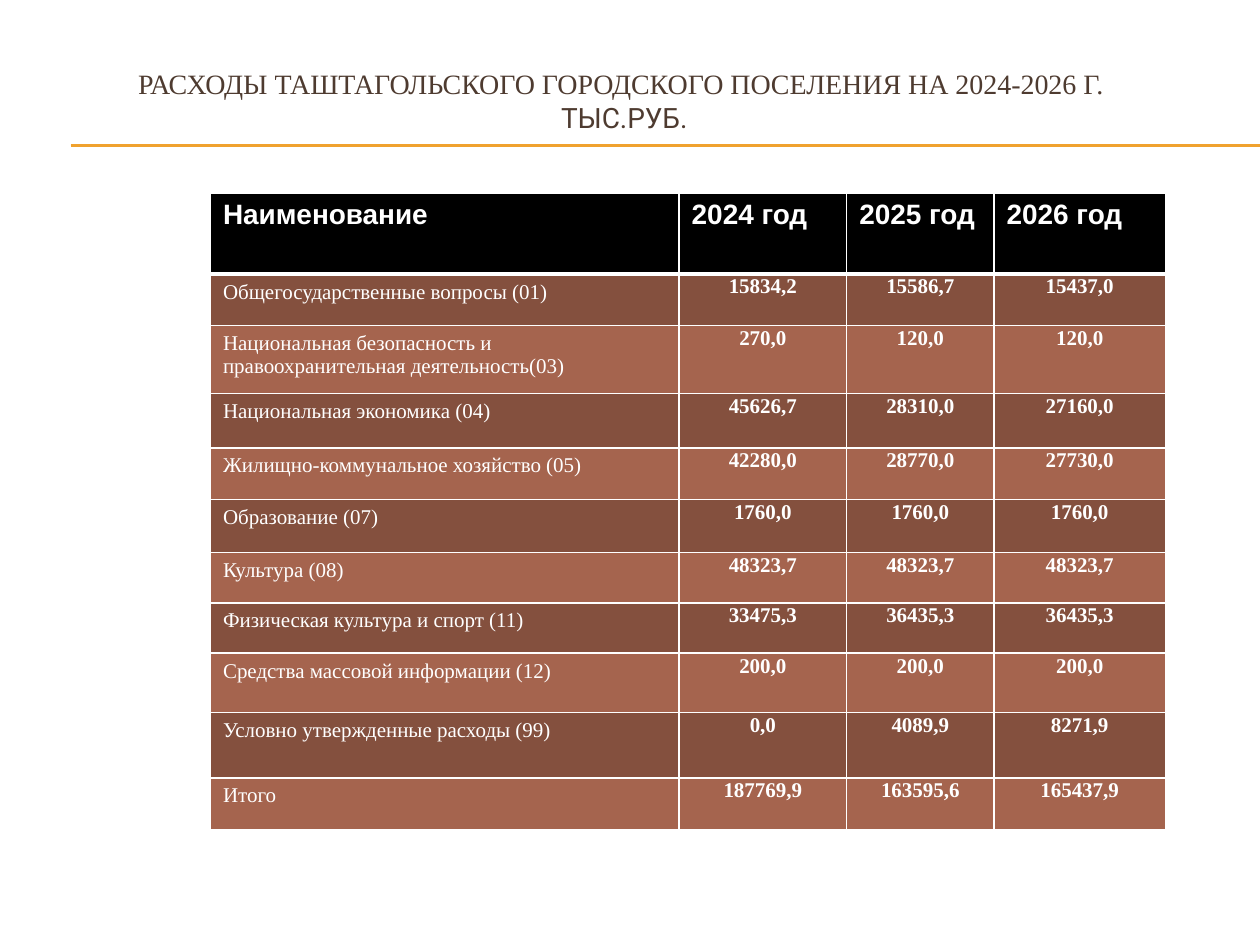
from lxml import etree
from pptx import Presentation
from pptx.dml.color import RGBColor
from pptx.enum.shapes import MSO_CONNECTOR
from pptx.enum.text import MSO_ANCHOR, PP_ALIGN
from pptx.oxml.ns import qn
from pptx.util import Inches, Pt

STRAIGHT = MSO_CONNECTOR.STRAIGHT
MIDDLE = MSO_ANCHOR.MIDDLE
LEFT, CENTER = PP_ALIGN.LEFT, PP_ALIGN.CENTER

COLORS = {
    "title": "4E3B30",
    "rule": "F0A22E",
    "header": "000000",
    "odd": "84503E",
    "even": "A5644E",
    "white": "FFFFFF",
}
SERIF, SANS, TITLE_SANS = "Times New Roman", "Arial", "Roboto"

TITLE_LINES = [
    ("РАСХОДЫ ТАШТАГОЛЬСКОГО ГОРОДСКОГО ПОСЕЛЕНИЯ НА 2024-2026 Г.", SERIF),
    (" ТЫС.РУБ.", TITLE_SANS),
]
HEADER = ("Наименование", "2024 год", "2025 год", "2026 год")
EXPENSES = [
    ("Общегосударственные вопросы (01)", "15834,2", "15586,7", "15437,0"),
    ("Национальная безопасность и правоохранительная деятельность(03)",
     "270,0", "120,0", "120,0"),
    ("Национальная экономика (04)", "45626,7", "28310,0", "27160,0"),
    ("Жилищно-коммунальное хозяйство (05)", "42280,0", "28770,0", "27730,0"),
    ("Образование (07)", "1760,0", "1760,0", "1760,0"),
    ("Культура (08)", "48323,7", "48323,7", "48323,7"),
    ("Физическая культура и спорт (11)", "33475,3", "36435,3", "36435,3"),
    ("Средства массовой информации (12)", "200,0", "200,0", "200,0"),
    ("Условно утвержденные расходы (99)", "0,0", "4089,9", "8271,9"),
    ("Итого", "187769,9", "163595,6", "165437,9"),
]
# Sizes in grid units
COLUMN_WIDTHS = (37.2, 13.3, 11.7, 13.6)
ROW_HEIGHTS = (6.45, 4.1, 5.4, 4.3, 4.1, 4.2, 4.0, 4.0, 4.7, 5.2, 4.1)


class SlideBuilder:
    """Places elements on a grid of 100 columns by 75 rows."""

    def __init__(self, presentation):
        self.column = presentation.slide_width / 100
        self.row = presentation.slide_height / 75
        self.slide = presentation.slides.add_slide(presentation.slide_layouts[6])

    def place(self, left, top, width, height):
        return (round(left * self.column), round(top * self.row),
                round(width * self.column), round(height * self.row))

    def style(self, font, name, size, color, bold=False):
        font.name, font.size, font.bold = name, Pt(size), bold
        font.color.rgb = RGBColor.from_string(COLORS[color])

    def rule(self, left, right, y):
        start_x, start_y, end_x, _ = self.place(left, y, right, 0)
        line = self.slide.shapes.add_connector(STRAIGHT, start_x, start_y, end_x, start_y)
        line.line.color.rgb = RGBColor.from_string(COLORS["rule"])
        line.line.width = Pt(0.75)
        etree.SubElement(line._element.spPr, qn("a:effectLst"))

    def title(self, lines, *box):
        frame = self.slide.shapes.add_textbox(*self.place(*box)).text_frame
        frame.word_wrap = True
        frame.vertical_anchor = MIDDLE
        paragraph = frame.paragraphs[0]
        paragraph.alignment = CENTER
        for index, (text, font_name) in enumerate(lines):
            if index:
                paragraph.add_line_break()
            run = paragraph.add_run()
            run.text = text
            self.style(run.font, font_name, 16, "title")

    def cell(self, cell, text, fill, font_name, size, bold, alignment):
        cell.fill.solid()
        cell.fill.fore_color.rgb = RGBColor.from_string(COLORS[fill])
        cell.text = text
        paragraph = cell.text_frame.paragraphs[0]
        paragraph.alignment = alignment
        self.style(paragraph.font, font_name, size, "white", bold)

    def bottom_border(self, cell, color, width):
        properties = cell._tc.get_or_add_tcPr()
        border = etree.Element(qn("a:lnB"), w=str(Pt(width)))
        fill = etree.SubElement(border, qn("a:solidFill"))
        etree.SubElement(fill, qn("a:srgbClr"), val=COLORS[color])
        properties.insert(0, border)

    def table(self, header, records, left, top, widths, heights):
        box = self.place(left, top, sum(widths), sum(heights))
        table = self.slide.shapes.add_table(len(heights), len(widths), *box).table
        for column, width in zip(table.columns, widths):
            column.width = round(width * self.column)
        for row, height in zip(table.rows, heights):
            row.height = round(height * self.row)

        for index, text in enumerate(header):
            cell = table.cell(0, index)
            self.cell(cell, text, "header", SANS, 16, True, LEFT)
            self.bottom_border(cell, "white", 2)

        for row_index, record in enumerate(records, 1):
            fill = "odd" if row_index % 2 else "even"
            for index, text in enumerate(record):
                cell = table.cell(row_index, index)
                is_value = index > 0
                self.cell(cell, text, fill, SERIF, 12, is_value,
                          CENTER if is_value else LEFT)
                if is_value:
                    cell.margin_left = cell.margin_right = cell.margin_top = Inches(0.01)
                    cell.margin_bottom = 0


def main():
    presentation = Presentation()
    presentation.slide_width, presentation.slide_height = Inches(10), Inches(7.5)
    builder = SlideBuilder(presentation)

    # Double rule under the title
    for y in (11.5, 11.6):
        builder.rule(5.6, 100, y)

    # Title and expense table
    builder.title(TITLE_LINES, 4.3, 3.6, 90, 8.7)
    builder.table(HEADER, EXPENSES, 16.7, 15.3, COLUMN_WIDTHS, ROW_HEIGHTS)

    presentation.save("out.pptx")


if __name__ == "__main__":
    main()
